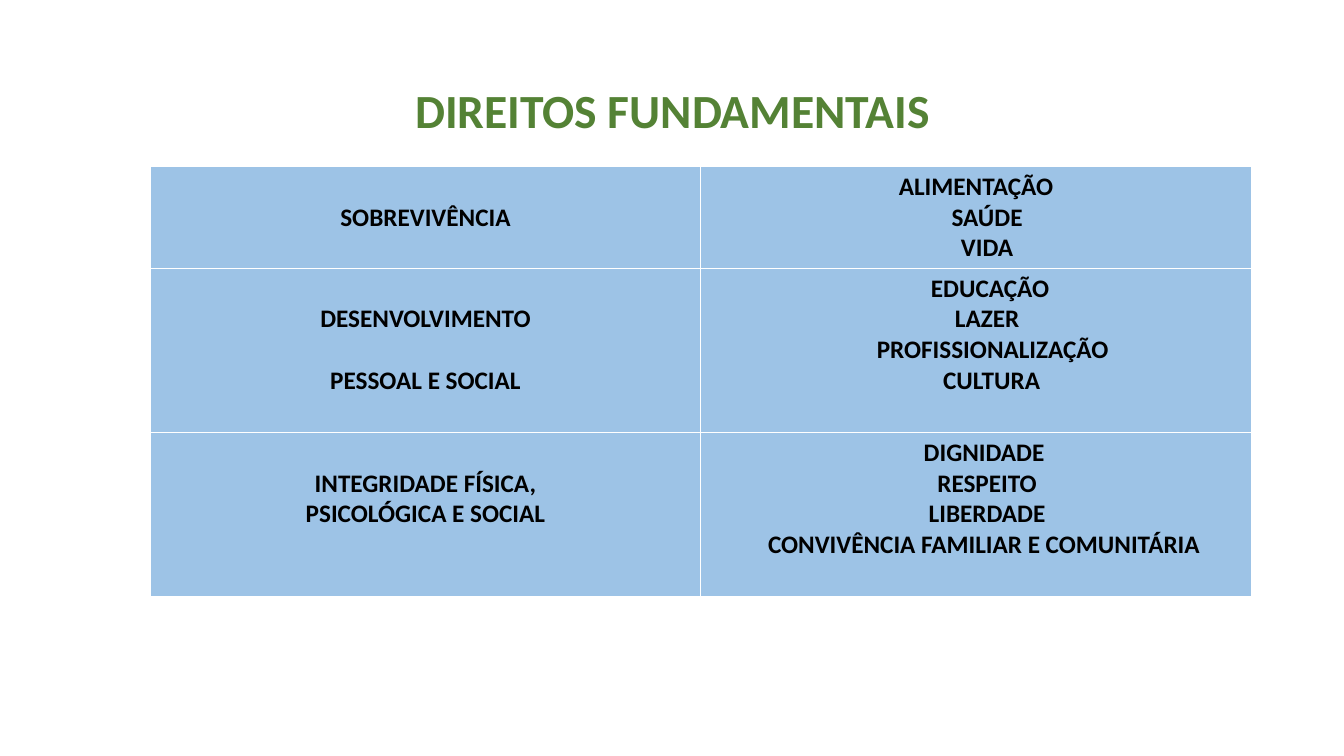
from pptx import Presentation
from pptx.dml.color import RGBColor
from pptx.enum.text import MSO_ANCHOR, PP_ALIGN
from pptx.oxml import parse_xml
from pptx.oxml.ns import nsdecls
from pptx.util import Inches, Pt

GREEN = RGBColor(0x54, 0x82, 0x35)
BLUE = RGBColor(0x9D, 0xC3, 0xE6)
BLACK = RGBColor(0, 0, 0)
BORDER = "FFFFFF"

# Content: each line is (text, left indent in inches, space before in points)
TITLE = "DIREITOS FUNDAMENTAIS"
RIGHTS = [
    {"height": 1.01,
     "group": [("SOBREVIVÊNCIA", 0, 0)],
     "items": [("ALIMENTAÇÃO", 0, 0), ("SAÚDE", 0.22, 0), ("VIDA", 0.22, 0)]},
    {"height": 1.63,
     "group": [("DESENVOLVIMENTO", 0, 0), ("PESSOAL E SOCIAL", 0, 22)],
     "items": [("EDUCAÇÃO", 0.28, 0), ("LAZER", 0.22, 0),
               ("PROFISSIONALIZAÇÃO", 0.33, 0), ("CULTURA", 0.31, 0)]},
    {"height": 1.63,
     "group": [("INTEGRIDADE FÍSICA,", 0, 0), ("PSICOLÓGICA E SOCIAL", 0, 0)],
     "items": [("DIGNIDADE", 0.16, 0), ("RESPEITO", 0.22, 0),
               ("LIBERDADE", 0.22, 0),
               ("CONVIVÊNCIA FAMILIAR E COMUNITÁRIA", 0.16, 0)]},
]
COL_WIDTH = 5.46
TOP_MARGIN = 0.05
LINE_HEIGHT = 0.305  # the groups start one line below the items


def write(tf, lines, size=18, color=BLACK, spacing=None):
    for i, (text, indent, before) in enumerate(lines):
        p = tf.paragraphs[0] if i == 0 else tf.add_paragraph()
        p.alignment = PP_ALIGN.CENTER
        if indent:
            p._p.get_or_add_pPr().set("marL", str(Inches(indent)))
        if before:
            p.space_before = Pt(before)
        if spacing:
            p.line_spacing = spacing
        r = p.add_run()
        r.text = text
        r.font.name, r.font.size, r.font.bold = "Calibri", Pt(size), True
        r.font.color.rgb = color


def format_cell(cell, lines, top):
    cell.margin_top = Inches(top)
    write(cell.text_frame, lines)
    cell.fill.solid()
    cell.fill.fore_color.rgb = BLUE
    # Borders come before the fill in the cell properties
    for i, side in enumerate(("lnL", "lnR", "lnT", "lnB")):
        cell._tc.get_or_add_tcPr().insert(i, parse_xml(
            f'<a:{side} {nsdecls("a")} w="{Pt(1)}"><a:solidFill>'
            f'<a:srgbClr val="{BORDER}"/></a:solidFill></a:{side}>'))


prs = Presentation()
prs.slide_width, prs.slide_height = Inches(13.33), Inches(7.5)
s = prs.slides.add_slide(prs.slide_layouts[6])

# Title
sp = s.shapes.add_textbox(Inches(0.92), Inches(0.4), Inches(11.5), Inches(1.45))
tf = sp.text_frame
tf.word_wrap = True
tf.vertical_anchor = MSO_ANCHOR.MIDDLE
write(tf, [(TITLE, 0, 0)], size=34, color=GREEN, spacing=0.9)

# Table of rights
total = sum(row["height"] for row in RIGHTS)
table = s.shapes.add_table(len(RIGHTS), 2, Inches(1.49), Inches(1.65),
                           Inches(2 * COL_WIDTH), Inches(total)).table
for col in table.columns:
    col.width = Inches(COL_WIDTH)
for i, row in enumerate(RIGHTS):
    table.rows[i].height = Inches(row["height"])
    format_cell(table.cell(i, 0), row["group"], TOP_MARGIN + LINE_HEIGHT)
    format_cell(table.cell(i, 1), row["items"], TOP_MARGIN)

prs.save("out.pptx")
